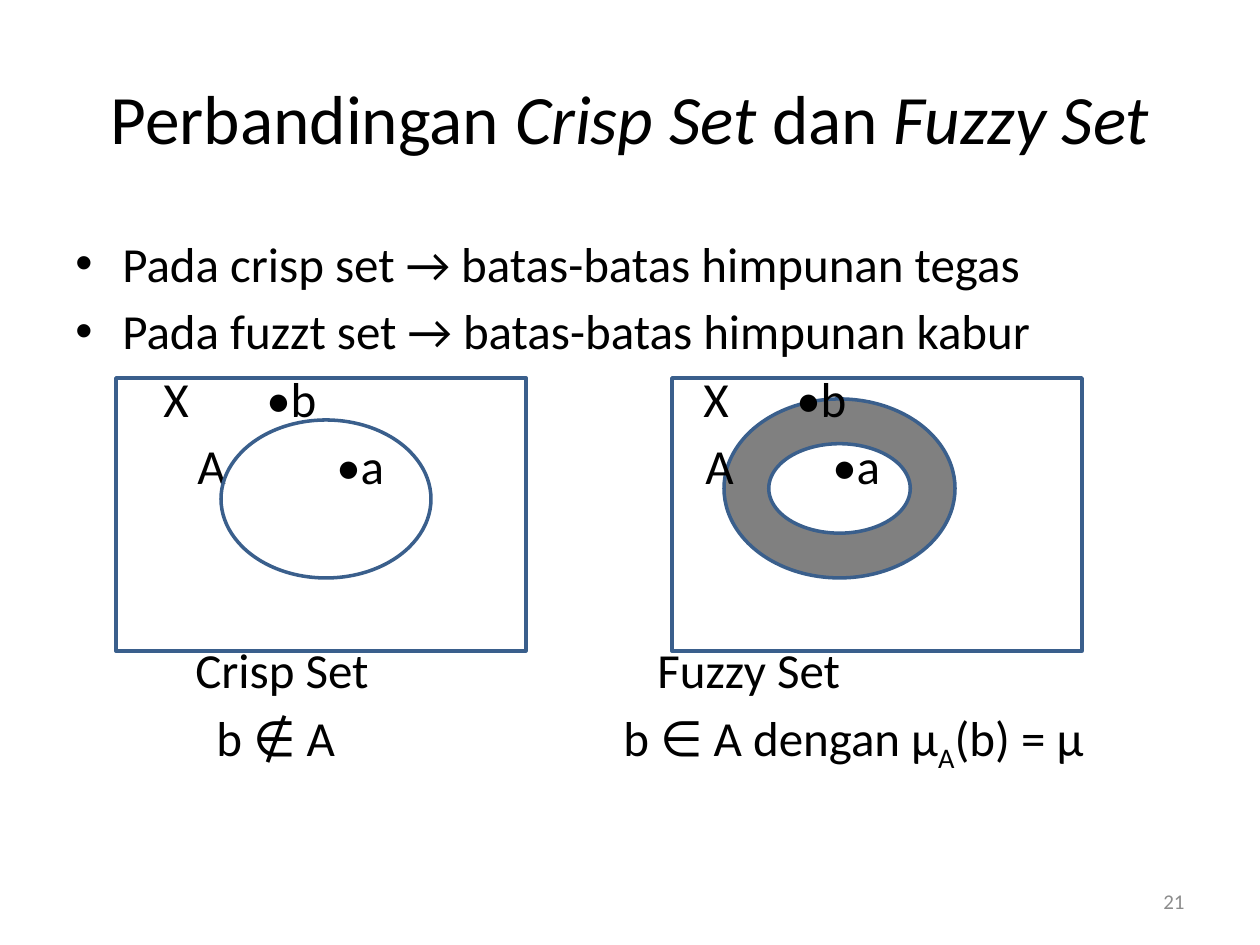
from dataclasses import dataclass
from lxml.etree import SubElement
from pptx import Presentation
from pptx.dml.color import RGBColor
from pptx.enum.shapes import MSO_SHAPE
from pptx.enum.text import MSO_ANCHOR, PP_ALIGN
from pptx.oxml.ns import qn
from pptx.util import Emu, Pt


@dataclass(frozen=True)
class Theme:
    font: str = "Calibri"
    ink: str = "000000"
    edge: str = "3A5F8C"
    ring: str = "808080"
    pale: str = "8C8C8C"
    head: float = 39.6
    body: int = 28
    foot: int = 12
    rule: int = 2
    gap: int = 5


LOOK = Theme()
TITLE = [("Perbandingan ", ""), ("Crisp Set ", "i"), ("dan ", ""), ("Fuzzy Set", "i")]
POINTS = [
    "Pada crisp set → batas-batas himpunan tegas",
    "Pada fuzzt set → batas-batas himpunan kabur",
]
ROWS = [
    (LOOK.gap, [(164, "X"), (267, "•b"), (704, "X"), (797, "•b")]),
    (LOOK.gap, [(198, "A"), (337, "•a"), (706, "A"), (833, "•a")]),
    (83, [(196, "Crisp Set"), (658, "Fuzzy Set")]),
    (LOOK.gap, [(217, "b ∉ A"), (624, "b ∈ A dengan μ")]),
]
TAIL = [("A", "sub"), ("(b) = μ", "")]
NUMBER = "21"
RING = (MSO_SHAPE.DONUT, (724, 399, 231, 179), LOOK.ring)
SETS = [
    (MSO_SHAPE.RECTANGLE, (116, 378, 410, 273), None),
    (MSO_SHAPE.RECTANGLE, (672, 378, 410, 273), None),
    (MSO_SHAPE.OVAL, (221, 420, 210, 158), None),
]
HEAD = (63, 38, 1134, 158)
BODY = (63, 227, 1134, 624)
FOOT = (903, 876, 294, 50)
INSET = 13
HANG = 47


def px(n):
    return Emu(n * 914400 // 126)


def draw(slide, kind, place, fill):
    shape = slide.shapes.add_shape(kind, *map(px, place))
    shape.shadow.inherit = False
    if fill:
        shape.fill.solid()
        shape.fill.fore_color.rgb = RGBColor.from_string(fill)
    else:
        shape.fill.background()
    shape.line.color.rgb = RGBColor.from_string(LOOK.edge)
    shape.line.width = Pt(LOOK.rule)


def box(slide, place, anchor):
    frame = slide.shapes.add_textbox(*map(px, place)).text_frame
    frame.word_wrap = True
    frame.vertical_anchor = anchor
    return frame


def style(para, size, ink=LOOK.ink):
    para.font.name = LOOK.font
    para.font.size = Pt(size)
    para.font.color.rgb = RGBColor.from_string(ink)


def write(para, runs):
    for text, mark in runs:
        run = para.add_run()
        run.text = text
        if mark == "i":
            run.font.italic = True
        elif mark == "sub":
            run.font._element.set("baseline", "-25000")


def bullet(para):
    props = para._p.get_or_add_pPr()
    props.set("marL", str(px(HANG)))
    props.set("indent", str(-px(HANG)))
    SubElement(props, qn("a:buFont")).set("typeface", "Arial")
    SubElement(props, qn("a:buChar")).set("char", "•")


def tabs(para, stops):
    group = SubElement(para._p.get_or_add_pPr(), qn("a:tabLst"))
    for stop in stops:
        tab = SubElement(group, qn("a:tab"))
        tab.set("pos", str(px(stop - BODY[0] - INSET)))
        tab.set("algn", "l")


def fill_body(frame):
    para = frame.paragraphs[0]
    for n, text in enumerate(POINTS):
        if n:
            para = frame.add_paragraph()
            para.space_before = Pt(LOOK.gap)
        bullet(para)
        write(para, [(text, "")])
        style(para, LOOK.body)
    for gap, cells in ROWS:
        para = frame.add_paragraph()
        para.space_before = Pt(gap)
        tabs(para, [x for x, _ in cells])
        write(para, [("\t" + text, "") for _, text in cells])
        style(para, LOOK.body)
    write(para, TAIL)


def main():
    deck = Presentation()
    deck.slide_width, deck.slide_height = px(1260), px(945)
    slide = deck.slides.add_slide(deck.slide_layouts[6])
    draw(slide, *RING)
    para = box(slide, HEAD, MSO_ANCHOR.MIDDLE).paragraphs[0]
    para.alignment = PP_ALIGN.CENTER
    write(para, TITLE)
    style(para, LOOK.head)
    fill_body(box(slide, BODY, MSO_ANCHOR.TOP))
    para = box(slide, FOOT, MSO_ANCHOR.MIDDLE).paragraphs[0]
    para.alignment = PP_ALIGN.RIGHT
    write(para, [(NUMBER, "")])
    style(para, LOOK.foot, LOOK.pale)
    for item in SETS:
        draw(slide, *item)
    deck.save("out.pptx")


if __name__ == "__main__":
    main()
